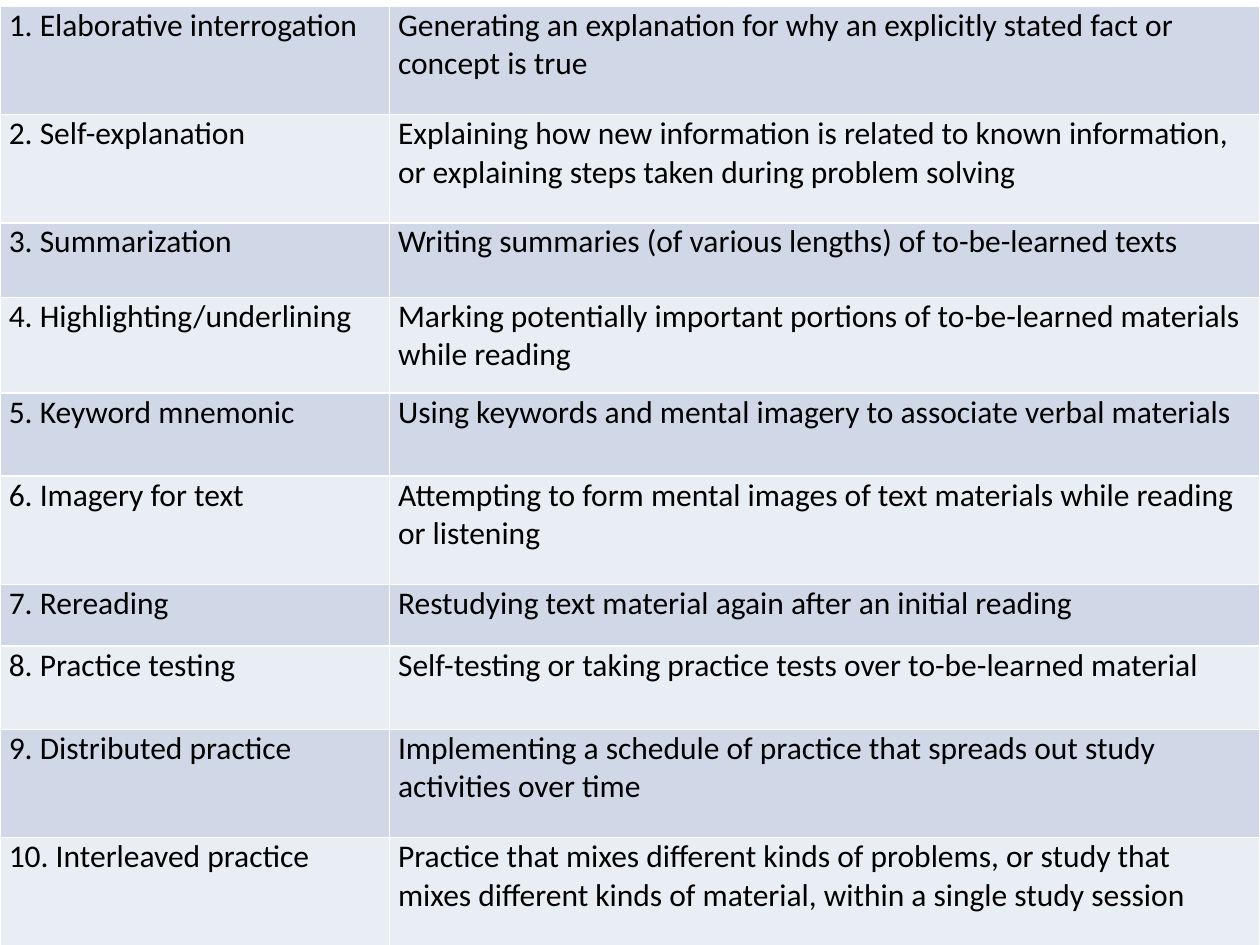
from lxml.etree import SubElement
from pptx import Presentation
from pptx.dml.color import RGBColor
from pptx.oxml.ns import qn
from pptx.util import Inches, Pt

# Content: technique, description, row height
ROWS = [
    ("Elaborative interrogation",
     "Generating an explanation for why an explicitly stated fact or concept is true", 0.86),
    ("Self-explanation",
     "Explaining how new information is related to known information, "
     "or explaining steps taken during problem solving", 0.86),
    ("Summarization",
     "Writing summaries (of various lengths) of to-be-learned texts", 0.59),
    ("Highlighting/underlining",
     "Marking potentially important portions of to-be-learned materials while reading", 0.76),
    ("Keyword mnemonic",
     "Using keywords and mental imagery to associate verbal materials", 0.66),
    ("Imagery for text",
     "Attempting to form mental images of text materials while reading or listening", 0.86),
    ("Rereading",
     "Restudying text material again after an initial reading", 0.49),
    ("Practice testing",
     "Self-testing or taking practice tests over to-be-learned material", 0.66),
    ("Distributed practice",
     "Implementing a schedule of practice that spreads out study activities over time", 0.86),
    ("Interleaved practice",
     "Practice that mixes different kinds of problems, or study that "
     "mixes different kinds of material, within a single study session", 0.86),
]
WIDTHS = (3.09, 6.91)
BLACK = RGBColor(0, 0, 0)
WHITE = RGBColor(0xFF, 0xFF, 0xFF)
BANDS = (RGBColor(0xD0, 0xD8, 0xE8), RGBColor(0xE9, 0xED, 0xF4))


def add_rules(cell):
    """Draw a thin white line on each side of the cell."""
    props = cell._tc.get_or_add_tcPr()
    for side in ("lnL", "lnR", "lnT", "lnB"):
        line = SubElement(props, qn(f"a:{side}"), w=str(Pt(1)))
        fill = SubElement(line, qn("a:solidFill"))
        SubElement(fill, qn("a:srgbClr"), val=str(WHITE))


def fill_cell(cell, text, color):
    add_rules(cell)
    cell.fill.solid()
    cell.fill.fore_color.rgb = color
    cell.margin_left = cell.margin_right = Inches(0.07)
    cell.margin_top = cell.margin_bottom = 0
    cell.text = text
    font = cell.text_frame.paragraphs[0].font
    font.name, font.size, font.color.rgb = "Calibri", Pt(18), BLACK


def main():
    deck = Presentation()
    deck.slide_width, deck.slide_height = Inches(10), Inches(7.5)
    slide = deck.slides.add_slide(deck.slide_layouts[6])

    # Table of techniques
    high = sum(row[2] for row in ROWS)
    table = slide.shapes.add_table(
        len(ROWS), len(WIDTHS), 0, Inches(0.05),
        Inches(sum(WIDTHS)), Inches(high)).table
    table.first_row = False
    for col, width in zip(table.columns, WIDTHS):
        col.width = Inches(width)

    # Numbered rows in alternating bands
    for i, (name, about, height) in enumerate(ROWS):
        table.rows[i].height = Inches(height)
        for j, text in enumerate((f"{i + 1}. {name}", about)):
            fill_cell(table.cell(i, j), text, BANDS[i % 2])

    deck.save("out.pptx")


if __name__ == "__main__":
    main()
